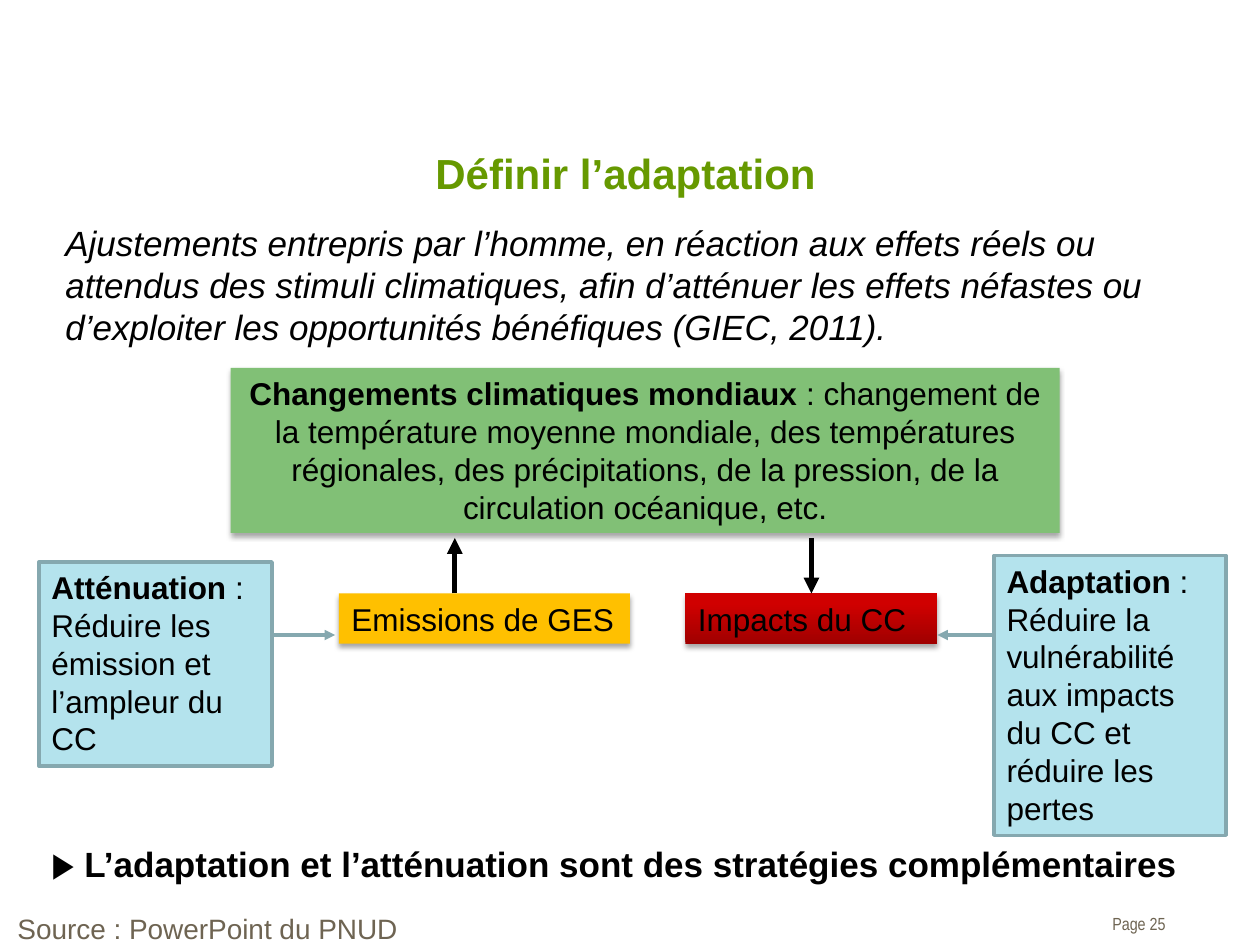
from lxml import etree
from pptx import Presentation
from pptx.dml.color import RGBColor
from pptx.enum import shapes, text
from pptx.oxml import ns
from pptx.util import Inches, Pt

BLACK = RGBColor(0, 0, 0)
GREEN = RGBColor(0x66, 0x99, 0x00)
BROWN = RGBColor(0x6E, 0x64, 0x52)
AMBER = RGBColor(0xFF, 0xC0, 0x00)
DARK_RED = RGBColor(0xA0, 0x00, 0x00)
RED = RGBColor(0xD0, 0x00, 0x00)
LEAF = RGBColor(0x81, 0xC0, 0x76)
PALE_BLUE = RGBColor(0xB4, 0xE3, 0xED)
STEEL = RGBColor(0x85, 0xA8, 0xAF)
LEFT, CENTER, RIGHT = text.PP_ALIGN.LEFT, text.PP_ALIGN.CENTER, text.PP_ALIGN.RIGHT


def inches(box):
    return [Inches(length) for length in box]


def write(frame, parts, size, color=BLACK, align=LEFT, font="Arial", italic=False, wrap=True):
    frame.word_wrap = wrap
    frame.vertical_anchor = text.MSO_ANCHOR.TOP
    paragraph = frame.paragraphs[0]
    paragraph.alignment = align
    for words, bold in parts:
        run = paragraph.add_run()
        run.text = words
        run.font.name = font
        run.font.size = Pt(size)
        run.font.bold = bold
        run.font.italic = italic
        run.font.color.rgb = color


def add_label(slide, box, words, size, bold=False, **style):
    label = slide.shapes.add_textbox(*inches(box))
    write(label.text_frame, [(words, bold)], size, **style)
    return label.text_frame


def add_panel(slide, box, parts, fill, border=None, align=LEFT):
    panel = slide.shapes.add_shape(shapes.MSO_SHAPE.RECTANGLE, *inches(box))
    panel.shadow.inherit = False
    panel.fill.solid()
    panel.fill.fore_color.rgb = fill
    if border:
        panel.line.color.rgb = border
        panel.line.width = Pt(2)
    else:
        panel.line.fill.background()
        add_shadow(panel)
    write(panel.text_frame, parts, 18, align=align)
    return panel


def add_shadow(panel):
    effects = panel._element.spPr.find(ns.qn("a:effectLst"))
    shadow = etree.SubElement(effects, ns.qn("a:outerShdw"), blurRad=str(Pt(3.1)),
                              dist=str(Pt(1.8)), dir="5400000", rotWithShape="0")
    tint = etree.SubElement(shadow, ns.qn("a:srgbClr"), val="000000")
    etree.SubElement(tint, ns.qn("a:alpha"), val="35000")


def add_arrow(slide, start, end, color, width):
    arrow = slide.shapes.add_connector(
        shapes.MSO_CONNECTOR.STRAIGHT, *inches(start + end))
    arrow.line.color.rgb = color
    arrow.line.width = Pt(width)
    etree.SubElement(arrow.line._get_or_add_ln(), ns.qn("a:tailEnd"), type="triangle")
    etree.SubElement(arrow._element.spPr, ns.qn("a:effectLst"))
    return arrow


def add_heading(slide, left, top, width):
    add_label(slide, (left + 0.74, top, 7.61, 0.76), "Définir l’adaptation", 24,
              bold=True, color=GREEN, align=CENTER)
    add_label(slide, (left, top + 0.59, width, 1.11),
              "Ajustements entrepris par l’homme, en réaction aux effets réels ou attendus "
              "des stimuli climatiques, afin d’atténuer les effets néfastes ou d’exploiter "
              "les opportunités bénéfiques (GIEC, 2011).", 20, italic=True)


def add_climate_cycle(slide, left, top, width):
    cause_top, arrow_top = top + 1.79, top + 1.35
    add_panel(slide, (left + 0.86, cause_top, 2.31, 0.4), [("Emissions de GES", False)], AMBER)
    impacts = add_panel(slide, (left + 3.61, cause_top, 2, 0.4),
                        [("Impacts du CC", False)], RED)
    impacts.fill.gradient()
    impacts.fill.gradient_angle = 90
    for stop, color, position in zip(impacts.fill.gradient_stops, (DARK_RED, RED), (0, 0.8)):
        stop.color.rgb = color
        stop.position = position
    add_panel(slide, (left, top, width, 1.31),
              [("Changements climatiques mondiaux ", True),
               (": changement de la température moyenne mondiale, des températures "
                "régionales, des précipitations, de la pression, de la circulation "
                "océanique, etc.", False)], LEAF, align=CENTER)
    rise, fall = left + 1.78, left + 4.61
    add_arrow(slide, (rise, cause_top), (rise, arrow_top), BLACK, 3)
    add_arrow(slide, (fall, arrow_top), (fall, cause_top), BLACK, 3).end_connect(impacts, 0)


def add_response(slide, box, name, action, arrow_from, arrow_to):
    add_panel(slide, box, [(name + " ", True), (": " + action, False)], PALE_BLUE, STEEL)
    add_arrow(slide, (arrow_from, 5.04), (arrow_to, 5.04), STEEL, 2)


def add_footer(slide, left, top):
    add_label(slide, (left + 0.27, top, 9.25, 0.44),
              "▶ L’adaptation et l’atténuation sont des stratégies complémentaires", 20, bold=True)
    source = add_label(slide, (left, top + 0.54, 3.25, 0.37), "Source : PowerPoint du PNUD",
                       16, color=BROWN, wrap=False)
    source.vertical_anchor = text.MSO_ANCHOR.MIDDLE
    page = add_label(slide, (left + 8.2, top + 0.56, 1.01, 0.27), "Page 25", 10,
                     color=BROWN, align=RIGHT, font="Arial Narrow")
    page.margin_right = 0


def main():
    deck = Presentation()
    deck.slide_width, deck.slide_height = Inches(10), Inches(7.5)
    slide = deck.slides.add_slide(deck.slide_layouts[6])
    add_heading(slide, 0.42, 1.12, 9.14)
    add_climate_cycle(slide, 1.83, 2.92, 6.58)
    add_response(slide, (0.31, 4.46, 1.85, 1.62), "Atténuation",
                 "Réduire les émission et l’ampleur du CC", 2.15, 2.66)
    add_response(slide, (7.89, 4.41, 1.84, 2.22), "Adaptation",
                 "Réduire la vulnérabilité aux impacts du CC et réduire les pertes", 7.89, 7.44)
    add_footer(slide, 0.04, 6.64)
    deck.save("out.pptx")


if __name__ == "__main__":
    main()
